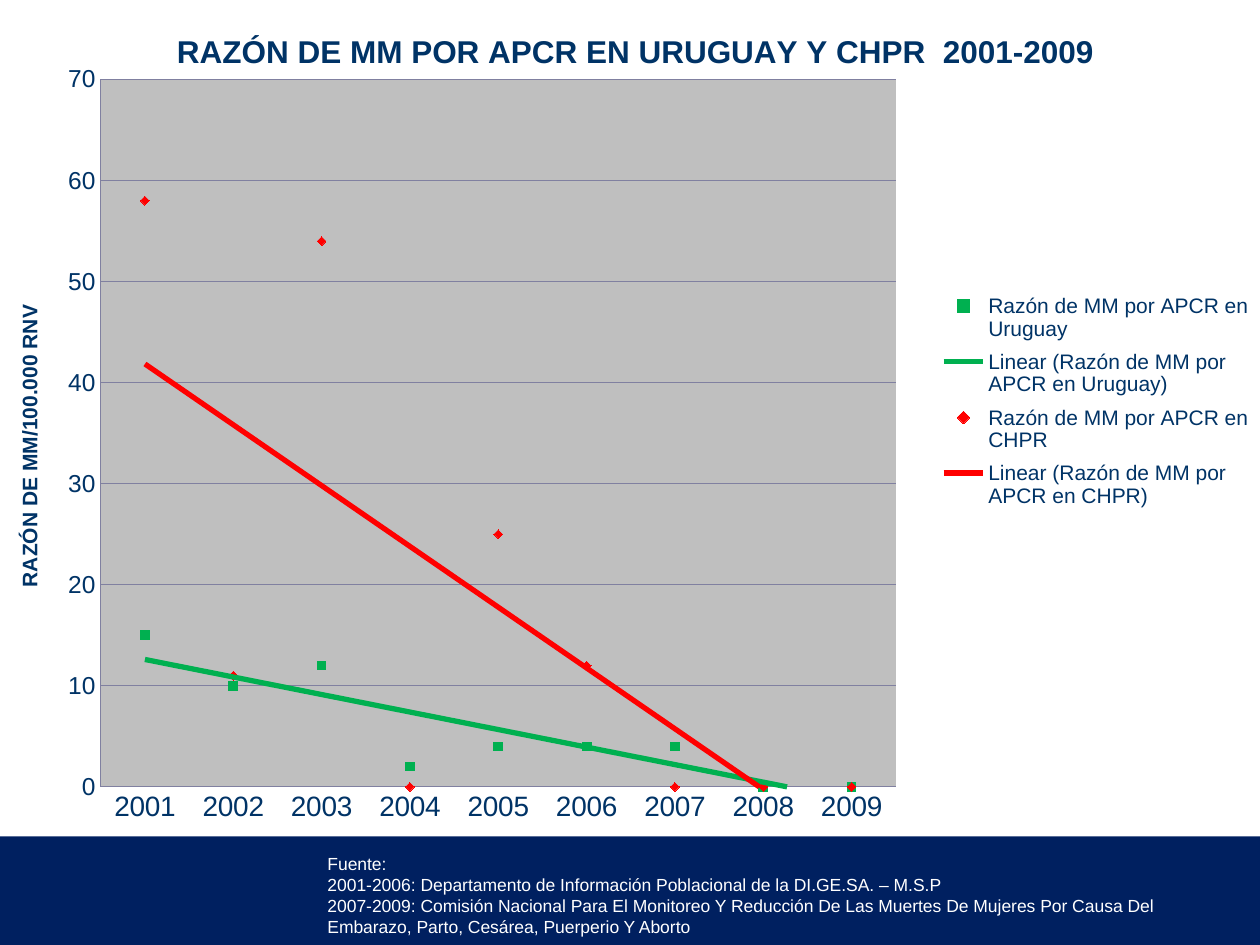
import lxml.etree
import pptx
import pptx.chart.data
import pptx.dml.color
import pptx.enum.chart
import pptx.oxml
import pptx.oxml.ns
import pptx.util

NAVY, TEXT, WHITE, GREY, GRID = "002060", "003366", "FFFFFF", "BFBFBF", "8080A0"
YEARS = [str(year) for year in range(2001, 2010)]
MARKERS = pptx.enum.chart.XL_MARKER_STYLE
SERIES = [
    ("Razón de MM por APCR en Uruguay", (15, 10, 12, 2, 4, 4, 4, 0, 0), "00B050", MARKERS.SQUARE),
    ("Razón de MM por APCR en CHPR", (58, 11, 54, 0, 25, 12, 0, 0, 0), "FF0000", MARKERS.DIAMOND),
]
SOURCES = [
    "Fuente:",
    "2001-2006: Departamento de Información Poblacional de la DI.GE.SA. – M.S.P",
    "2007-2009: Comisión Nacional Para El Monitoreo Y Reducción De Las Muertes De Mujeres "
    "Por Causa Del Embarazo, Parto, Cesárea, Puerperio Y Aborto",
]


def color(hex_value):
    """Turn a hex string into a colour."""
    return pptx.dml.color.RGBColor.from_string(hex_value)


def style_font(font, size, hex_value=TEXT, bold=False):
    """Set the typeface, size, colour and weight of a font."""
    font.name, font.size, font.bold = "Arial", pptx.util.Pt(size), bold
    font.color.rgb = color(hex_value)


def chart_xml(body):
    """Parse a chart element written with the c and a prefixes."""
    tag, rest = body[1:].split(">", 1)
    return pptx.oxml.parse_xml(f"<{tag} {pptx.oxml.ns.nsdecls('c', 'a')}>{rest}")


def fill_xml(hex_value):
    """Make shape properties with a solid fill and no outline."""
    return chart_xml(
        f'<c:spPr><a:solidFill><a:srgbClr val="{hex_value}"/></a:solidFill>'
        "<a:ln><a:noFill/></a:ln></c:spPr>"
    )


def place(parent, index, left, top, width=None, height=None, inner=False):
    """Give a chart part a manual layout in shares of the chart."""
    for layout in parent.findall(pptx.oxml.ns.qn("c:layout")):
        parent.remove(layout)
    target = '<c:layoutTarget val="inner"/>' if inner else ""
    modes = '<c:xMode val="edge"/><c:yMode val="edge"/>'
    lengths = zip("xywh", (left, top, width, height))
    values = "".join(f'<c:{key} val="{value}"/>' for key, value in lengths if value is not None)
    parent.insert(index, chart_xml(
        f"<c:layout><c:manualLayout>{target}{modes}{values}</c:manualLayout></c:layout>"
    ))


def write_title(title, text, size, left, top):
    """Write a bold chart or axis title at a share of the chart."""
    title.text_frame.text = text
    style_font(title.text_frame.paragraphs[0].runs[0].font, size, bold=True)
    place(title._element, 1, left, top)


def style_series(series, hex_value, marker_style):
    """Show a series as markers with a linear trend line."""
    series.smooth = False
    series.format.line.fill.background()
    series.marker.style, series.marker.size = marker_style, 5
    for part in (series.marker.format, series.marker.format.line):
        part.fill.solid()
        part.fill.fore_color.rgb = color(hex_value)
    trend = chart_xml(
        f'<c:trendline><c:spPr><a:ln w="{pptx.util.Pt(3)}"><a:solidFill>'
        f'<a:srgbClr val="{hex_value}"/></a:solidFill></a:ln></c:spPr>'
        '<c:trendlineType val="linear"/><c:dispRSqr val="0"/><c:dispEq val="0"/></c:trendline>'
    )
    series._element.find(pptx.oxml.ns.qn("c:cat")).addprevious(trend)


def style_axes(chart):
    """Set the scale, labels, lines and title of both axes."""
    for axis, size in ((chart.category_axis, 16), (chart.value_axis, 14)):
        axis.major_tick_mark = axis.minor_tick_mark = pptx.enum.chart.XL_TICK_MARK.NONE
        style_font(axis.tick_labels.font, size)
        axis.format.line.color.rgb = color(GRID)
        axis.format.line.width = pptx.util.Pt(0.75)
    value_axis = chart.value_axis
    value_axis.minimum_scale, value_axis.maximum_scale, value_axis.major_unit = 0, 70, 10
    value_axis.has_major_gridlines = True
    gridline = value_axis.major_gridlines.format.line
    gridline.color.rgb, gridline.width = color(GRID), pptx.util.Pt(0.75)
    write_title(value_axis.axis_title, "RAZÓN DE MM/100.000 RNV", 12, 0.01, 0.36)


def add_ratio_chart(slide, box):
    """Draw the mortality ratio chart in its box."""
    data = pptx.chart.data.CategoryChartData()
    data.categories = YEARS
    for name, values, *_ in SERIES:
        data.add_series(name, values)
    kind = pptx.enum.chart.XL_CHART_TYPE.LINE_MARKERS
    chart = slide.shapes.add_chart(kind, *box, data).chart
    style_font(chart.font, 10)
    chart.plots[0].vary_by_categories = False
    for series, (_, _, hex_value, marker_style) in zip(chart.plots[0].series, SERIES):
        style_series(series, hex_value, marker_style)
    style_axes(chart)
    chart.has_title = True
    write_title(chart.chart_title, "RAZÓN DE MM POR APCR EN URUGUAY Y CHPR  2001-2009", 18, 0.136, 0.03)
    chart.has_legend = True
    chart.legend.position = pptx.enum.chart.XL_LEGEND_POSITION.RIGHT
    chart.legend.include_in_layout = False
    style_font(chart.legend.font, 12)
    place(chart.legend._element, 1, 0.745, 0.34, 0.25, 0.28)
    chart_space = chart._chartSpace
    plot_area = chart_space.chart.plotArea
    place(plot_area, 0, 0.08, 0.095, 0.631, 0.846, inner=True)
    plot_area.append(fill_xml(GREY))
    chart_space.chart.addnext(fill_xml(WHITE))


def add_sources(slide, box):
    """Write the data sources in their box."""
    frame = slide.shapes.add_textbox(*box).text_frame
    frame.word_wrap = True
    frame.text = "\n".join(SOURCES)
    for paragraph in frame.paragraphs:
        style_font(paragraph.runs[0].font, 10, WHITE)


def main():
    """Build and save the slide."""
    presentation = pptx.Presentation()
    width = presentation.slide_width = pptx.util.Inches(10)
    height = presentation.slide_height = pptx.util.Inches(7.5)
    slide = presentation.slides.add_slide(presentation.slide_layouts[6])
    slide.background.fill.solid()
    slide.background.fill.fore_color.rgb = color(NAVY)
    chart_height = int(height * 0.885)
    add_sources(slide, (width // 4, int(height * 0.896), int(width * 0.742), int(height * 0.103)))
    add_ratio_chart(slide, (0, 0, width, chart_height))
    presentation.save("out.pptx")


if __name__ == "__main__":
    main()
